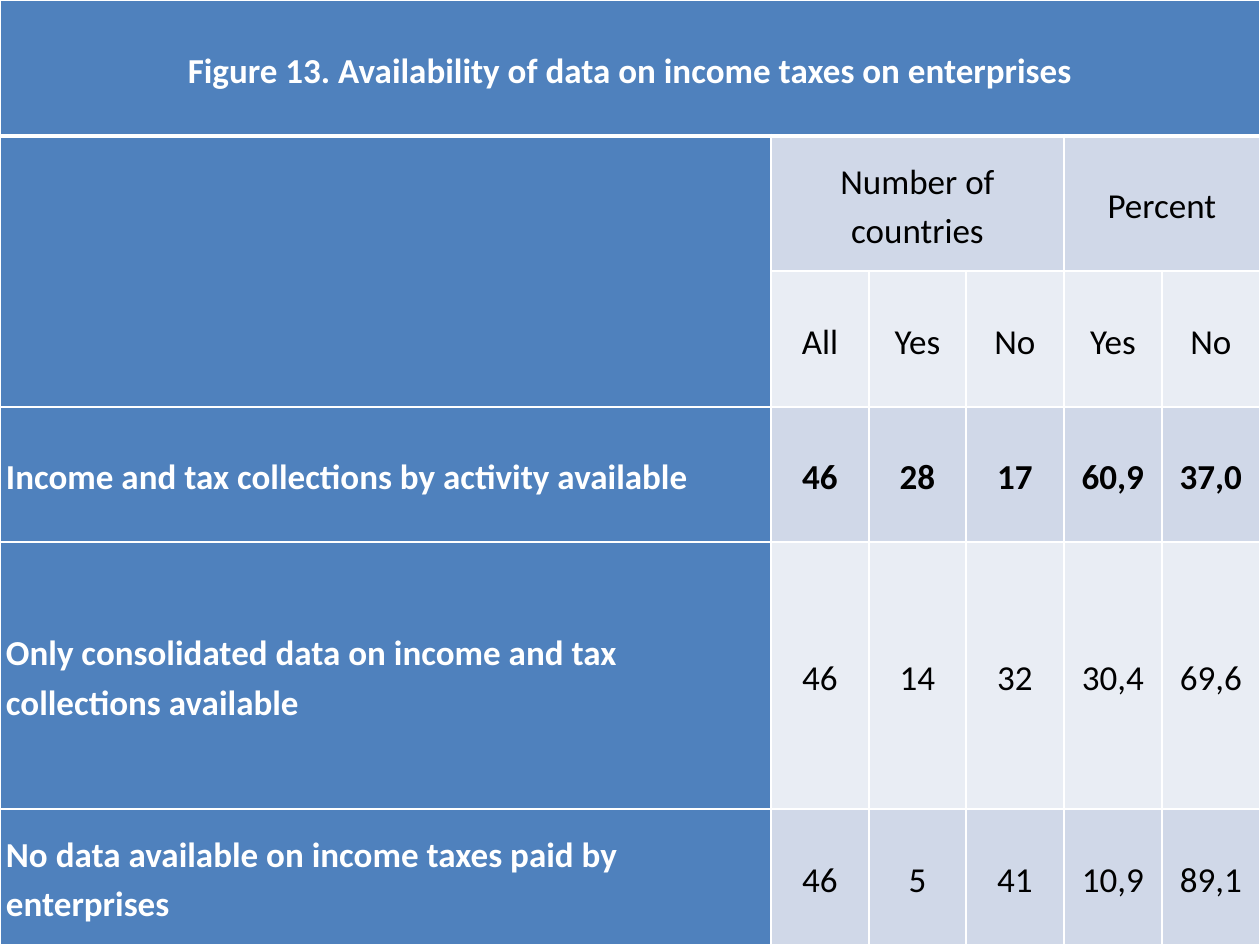
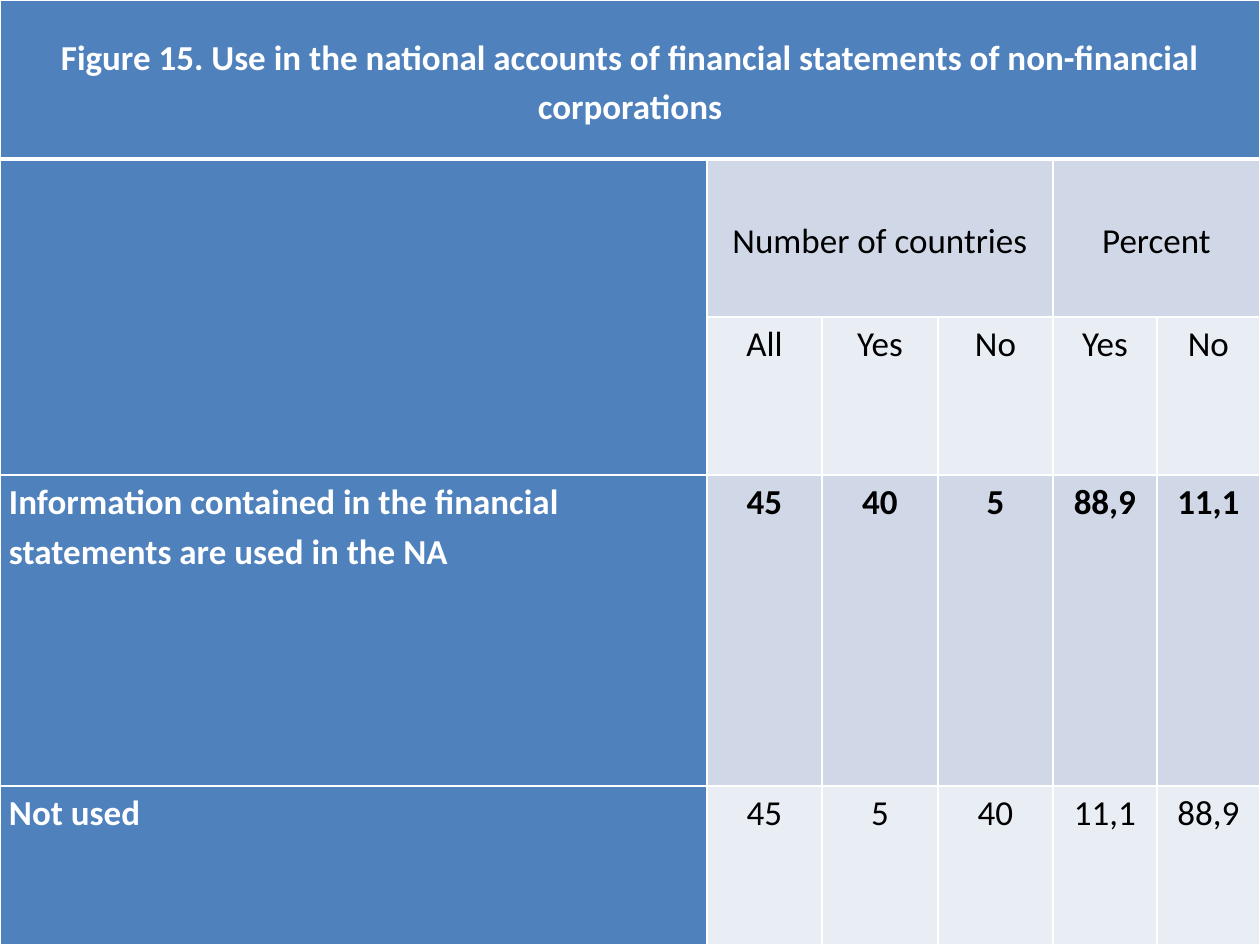
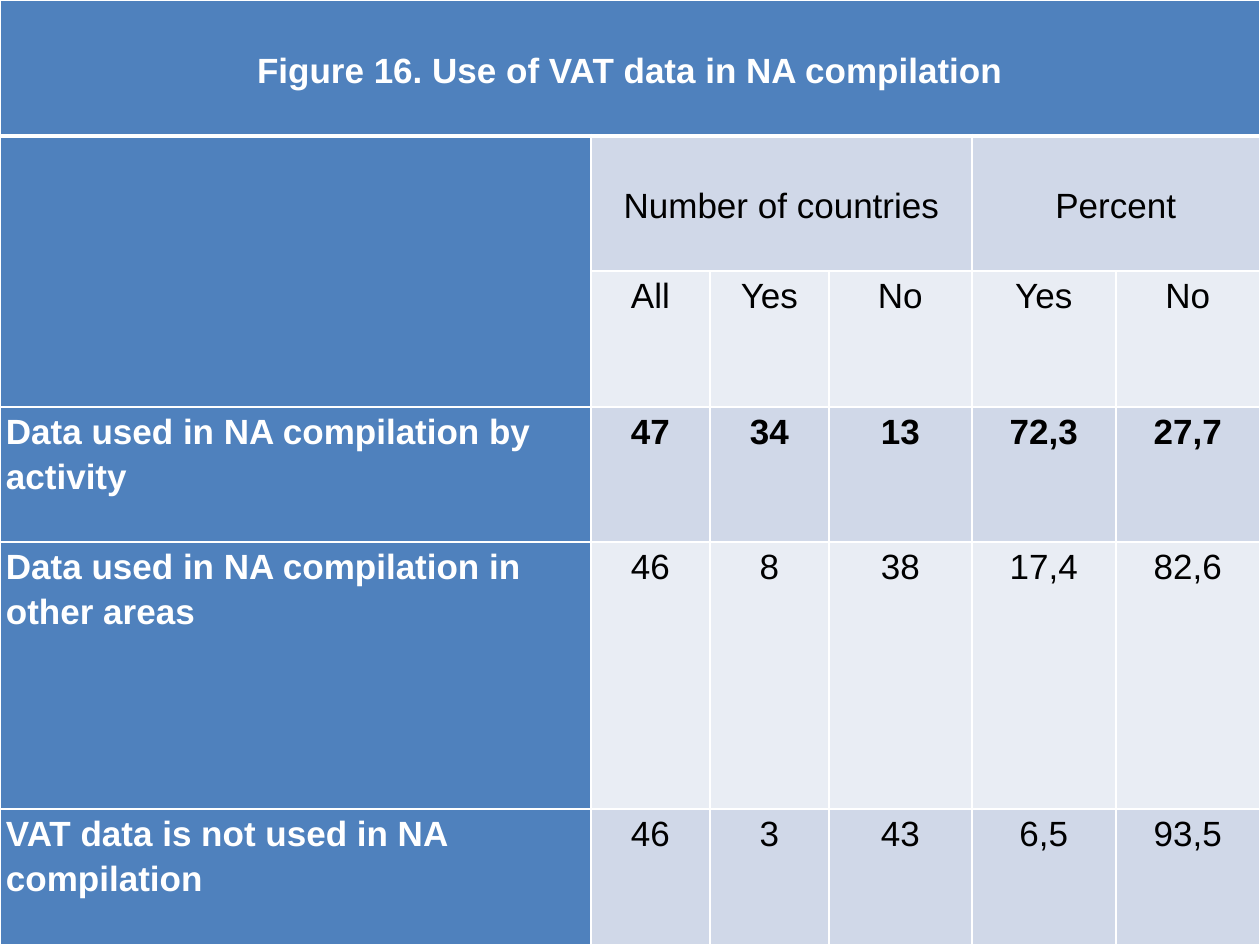
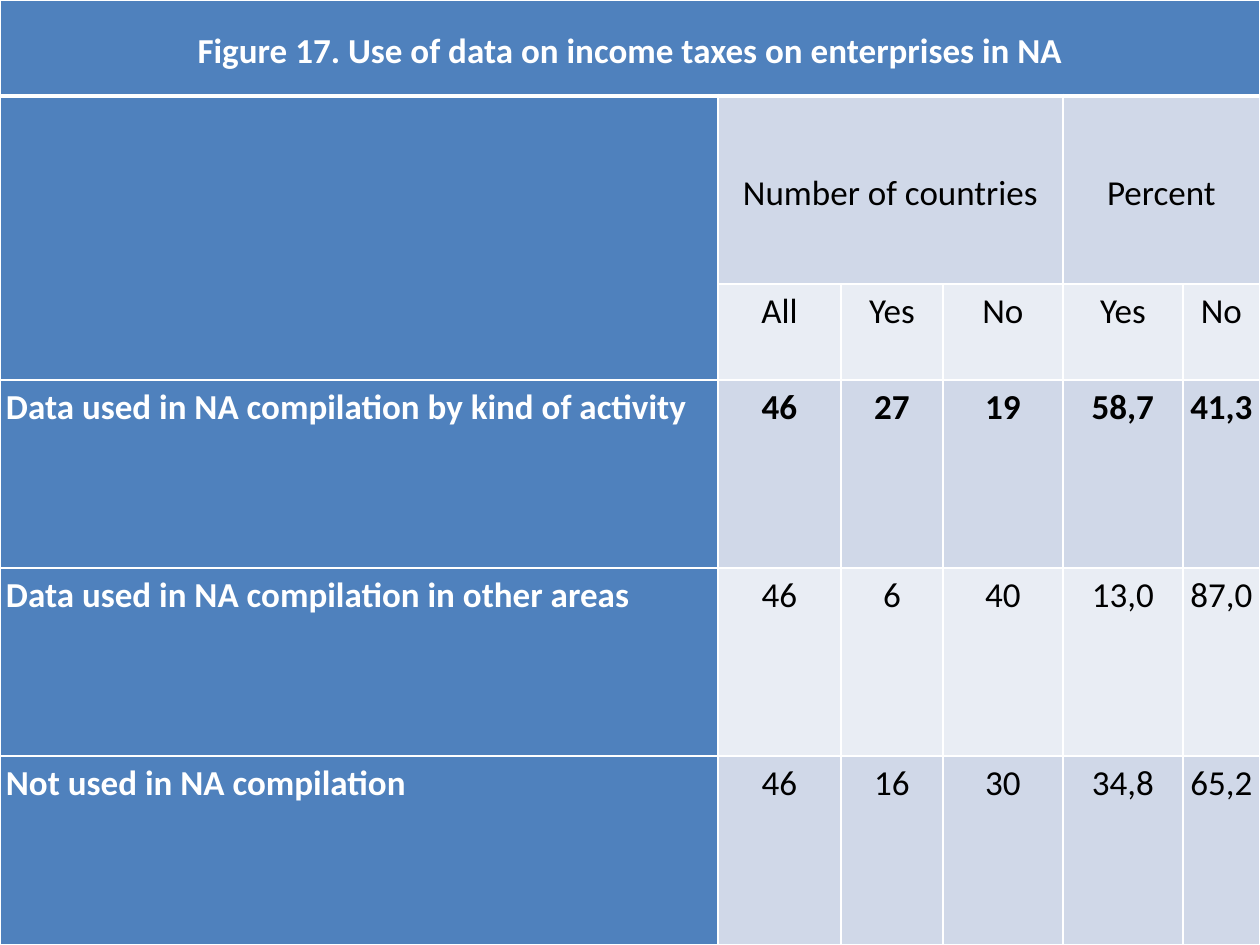
from dataclasses import dataclass
from itertools import pairwise

import pptx
import pptx.dml.color
import pptx.enum.text
import pptx.oxml
import pptx.oxml.ns
import pptx.util

EMU_PER_PX = 914400 / 126
SLIDE_W, SLIDE_H = 1260, 945
ALIGN = pptx.enum.text.PP_ALIGN
ANCHOR = pptx.enum.text.MSO_ANCHOR


@dataclass(frozen=True)
class Theme:
    header: str = "4F81BD"
    bands: tuple = ("E9EDF4", "D0D8E8")
    light_text: str = "FFFFFF"
    dark_text: str = "000000"
    rule: str = "FFFFFF"
    rule_pt: int = 1
    title_rule_pt: int = 3
    text_pt: int = 20
    line_spacing: float = 1.15
    title_gap_pt: int = 3


THEME = Theme()


@dataclass(frozen=True)
class Figure:
    title: str
    answers: tuple  # label, All, Yes, No, Yes %, No %
    column_edges: tuple
    row_edges: tuple
    font: str = "Calibri"
    inset: int = 6
    body_anchor: int = ANCHOR.TOP


SIX_ROW_EDGES = (0, 136, 271, 407, 542, 809, 945)

FIGURES = (
    Figure(
        "Figure 13. Availability of data on income taxes on enterprises",
        (
            ("Income and tax collections by activity available", "46", "28", "17", "60,9", "37,0"),
            ("Only consolidated data on income and tax collections available",
             "46", "14", "32", "30,4", "69,6"),
            ("No data available on income taxes paid by enterprises",
             "46", "5", "41", "10,9", "89,1"),
        ),
        column_edges=(0, 771, 869, 966, 1064, 1162, 1260),
        row_edges=SIX_ROW_EDGES,
        body_anchor=ANCHOR.MIDDLE,
    ),
    Figure(
        "Figure 15. Use in the national accounts of financial statements of "
        "non-financial corporations",
        (
            ("Information contained in the financial statements are used in the NA",
             "45", "40", "5", "88,9", "11,1"),
            ("Not used", "45", "5", "40", "11,1", "88,9"),
        ),
        column_edges=(0, 707, 822, 938, 1053, 1157, 1260),
        row_edges=(0, 159, 317, 475, 786, 945),
        inset=9,
    ),
    Figure(
        "Figure 16. Use of VAT data in NA compilation",
        (
            ("Data used in NA compilation by activity", "47", "34", "13", "72,3", "27,7"),
            ("Data used in NA compilation in other areas", "46", "8", "38", "17,4", "82,6"),
            ("VAT data is not used in NA compilation", "46", "3", "43", "6,5", "93,5"),
        ),
        column_edges=(0, 591, 710, 829, 972, 1116, 1260),
        row_edges=SIX_ROW_EDGES,
        font="Arial",
    ),
    Figure(
        "Figure 17. Use of data on income taxes on enterprises in NA",
        (
            ("Data used in NA compilation by kind of activity", "46", "27", "19", "58,7", "41,3"),
            ("Data used in NA compilation in other areas", "46", "6", "40", "13,0", "87,0"),
            ("Not used in NA compilation", "46", "16", "30", "34,8", "65,2"),
        ),
        column_edges=(0, 718, 841, 943, 1063, 1183, 1260),
        row_edges=(0, 96, 284, 380, 568, 756, 945),
    ),
)


def px(length):
    return pptx.util.Emu(round(length * EMU_PER_PX))


def rgb(colour):
    return pptx.dml.color.RGBColor.from_string(colour)


def rule_cell(cell, top_pt, bottom_pt):
    """Draw the four borders of a cell."""
    widths = {"lnL": THEME.rule_pt, "lnR": THEME.rule_pt, "lnT": top_pt, "lnB": bottom_pt}
    properties = cell._tc.get_or_add_tcPr()
    for side, width in widths.items():
        properties.append(pptx.oxml.parse_xml(
            f'<a:{side} {pptx.oxml.ns.nsdecls("a")} w="{pptx.util.Pt(width)}">'
            f'<a:solidFill><a:srgbClr val="{THEME.rule}"/></a:solidFill></a:{side}>'
        ))


def paint_grid(table):
    """Give every cell its borders and its header or band colour."""
    for r, row in enumerate(table.rows):
        top = THEME.title_rule_pt if r == 1 else THEME.rule_pt
        bottom = THEME.title_rule_pt if r == 0 else THEME.rule_pt
        for c, cell in enumerate(row.cells):
            rule_cell(cell, top, bottom)
            cell.fill.solid()
            is_header = r == 0 or c == 0
            cell.fill.fore_color.rgb = rgb(THEME.header if is_header else THEME.bands[r % 2])


def write_cell(cell, text, figure, *, colour=THEME.dark_text, bold=False,
               align=ALIGN.CENTER, anchor=ANCHOR.MIDDLE, gap_pt=0):
    cell.margin_left = cell.margin_right = px(figure.inset)
    cell.margin_top = cell.margin_bottom = 0
    cell.vertical_anchor = anchor
    cell.text_frame.text = text
    paragraph = cell.text_frame.paragraphs[0]
    paragraph.alignment = align
    paragraph.line_spacing = THEME.line_spacing
    paragraph.space_before = paragraph.space_after = pptx.util.Pt(gap_pt)
    for run in paragraph.runs:
        run.font.name = figure.font
        run.font.size = pptx.util.Pt(THEME.text_pt)
        run.font.bold = bold
        run.font.color.rgb = rgb(colour)


def write_headings(table, figure):
    # Title band, empty corner and the two column groups
    table.cell(0, 0).merge(table.cell(0, 5))
    table.cell(1, 0).merge(table.cell(2, 0))
    write_cell(table.cell(0, 0), figure.title, figure, colour=THEME.light_text,
               bold=True, gap_pt=THEME.title_gap_pt)
    for group, first, last in (("Number of countries", 1, 3), ("Percent", 4, 5)):
        table.cell(1, first).merge(table.cell(1, last))
        write_cell(table.cell(1, first), group, figure)
    for c, heading in enumerate(("All", "Yes", "No", "Yes", "No"), start=1):
        write_cell(table.cell(2, c), heading, figure, anchor=figure.body_anchor)


def write_answers(table, figure):
    # The first answer is the emphasised one
    for r, (label, *values) in enumerate(figure.answers, start=3):
        write_cell(table.cell(r, 0), label, figure, colour=THEME.light_text, bold=True,
                   align=ALIGN.LEFT, anchor=figure.body_anchor)
        for c, value in enumerate(values, start=1):
            write_cell(table.cell(r, c), value, figure, bold=r == 3,
                       anchor=figure.body_anchor)


def add_figure(slide, figure):
    row_count, column_count = len(figure.row_edges) - 1, len(figure.column_edges) - 1
    table = slide.shapes.add_table(row_count, column_count, 0, 0,
                                   px(SLIDE_W), px(SLIDE_H)).table
    table.first_col = True
    for column, (left, right) in zip(table.columns, pairwise(figure.column_edges)):
        column.width = px(right - left)
    for row, (top, bottom) in zip(table.rows, pairwise(figure.row_edges)):
        row.height = px(bottom - top)
    paint_grid(table)
    write_headings(table, figure)
    write_answers(table, figure)


def main():
    deck = pptx.Presentation()
    deck.slide_width, deck.slide_height = px(SLIDE_W), px(SLIDE_H)
    blank = deck.slide_layouts[6]
    for figure in FIGURES:
        add_figure(deck.slides.add_slide(blank), figure)
    deck.save("out.pptx")


if __name__ == "__main__":
    main()
